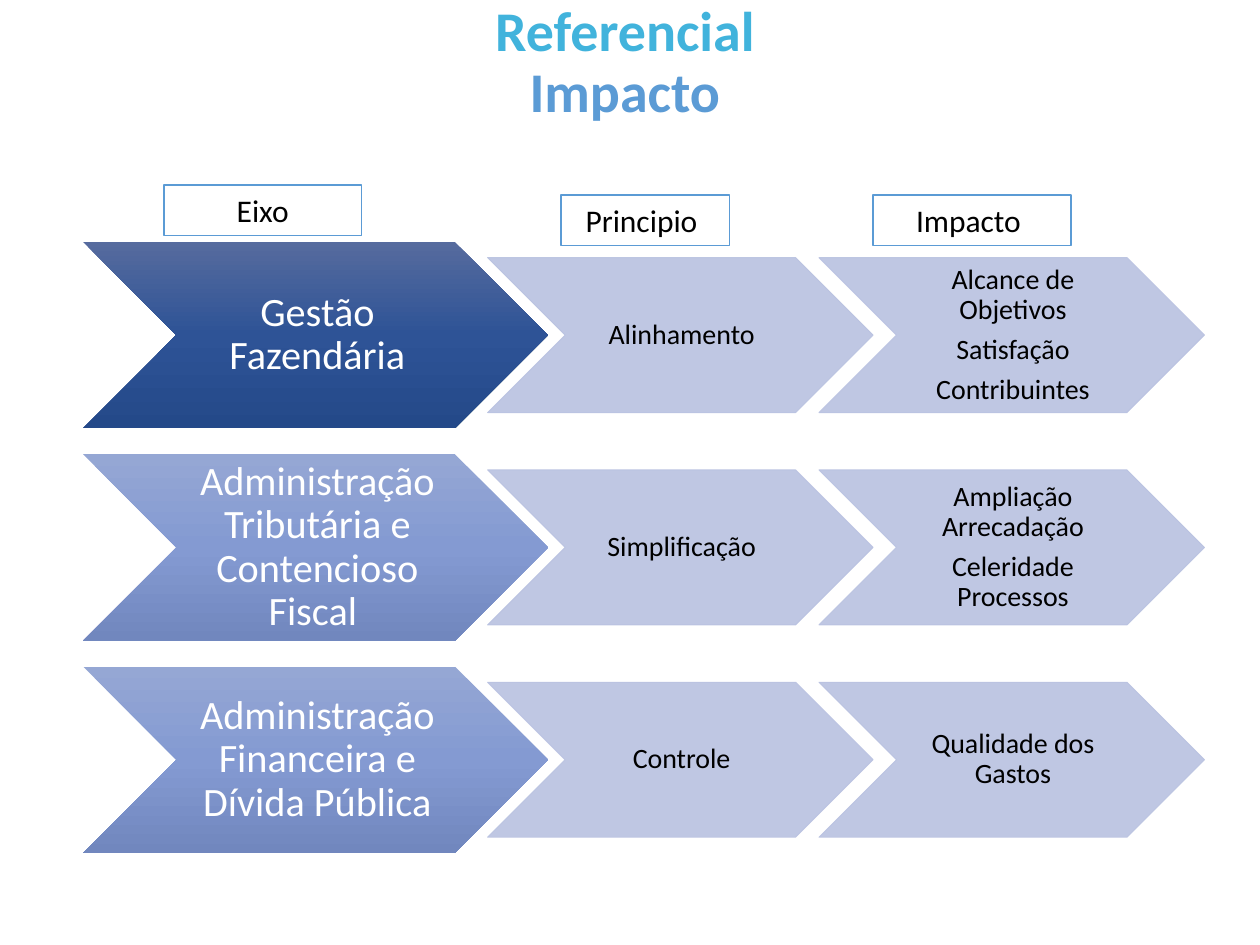
from dataclasses import dataclass

from lxml import etree
from pptx import Presentation
from pptx.dml.color import RGBColor
from pptx.enum.shapes import MSO_SHAPE
from pptx.enum.text import MSO_ANCHOR, PP_ALIGN
from pptx.oxml import parse_xml
from pptx.oxml.ns import nsdecls, qn
from pptx.util import Inches, Pt

CHEVRON, RECT = MSO_SHAPE.CHEVRON, MSO_SHAPE.RECTANGLE
MIDDLE, TOP = MSO_ANCHOR.MIDDLE, MSO_ANCHOR.TOP
CENTER = PP_ALIGN.CENTER

COLS, ROWS = 1000, 750
FIRST_CENTER, PITCH = 266, 168.5
FONT = "Calibri"
BLUE, CYAN, PALE = "5B9BD5", "41B3DC", "B9C2E1"
WHITE, BLACK = "FFFFFF", "000000"
DARK_GRADIENT = ("566B9E", "2E5396", "244989")
LIGHT_GRADIENT = ("95A7D4", "849AD2", "7187BE")

prs = Presentation()
prs.slide_width, prs.slide_height = Inches(10), Inches(7.5)
s = prs.slides.add_slide(prs.slide_layouts[6])


@dataclass(frozen=True)
class Box:
    col: float
    row: float
    cols: float
    rows: float

    def emu(self) -> tuple[int, ...]:
        w, h = prs.slide_width / COLS, prs.slide_height / ROWS
        return (round(self.col * w), round(self.row * h),
                round(self.cols * w), round(self.rows * h))


@dataclass(frozen=True)
class Column:
    col: float
    cols: float
    rows: float
    size: int
    color: str
    inset: float


@dataclass(frozen=True)
class Band:
    gradient: tuple[str, ...]
    cells: tuple[tuple[str, ...], ...]


@dataclass(frozen=True)
class Header:
    box: Box
    text: str


COLUMNS = (
    Column(66, 369, 148, 23, WHITE, 0.02),
    Column(387, 306, 123, 16, BLACK, 0.01),
    Column(650, 306, 123, 16, BLACK, 0.01),
)
BANDS = (
    Band(DARK_GRADIENT, (("Gestão Fazendária",), ("Alinhamento",),
                         ("Alcance de Objetivos", "Satisfação", "Contribuintes"))),
    Band(LIGHT_GRADIENT, (("Administração Tributária e Contencioso Fiscal ",), ("Simplificação",),
                          ("Ampliação Arrecadação", "Celeridade Processos"))),
    Band(LIGHT_GRADIENT, (("Administração Financeira e Dívida Pública",), ("Controle",),
                          ("Qualidade dos Gastos",))),
)
HEADERS = (
    Header(Box(130, 147, 157, 40), "Eixo"),
    Header(Box(445, 155, 134, 40), "Principio "),
    Header(Box(693, 155, 157, 40), "Impacto "),
)


def rgb(value: str) -> RGBColor:
    return RGBColor.from_string(value)


def apply(target, values: dict) -> None:
    for name, value in values.items():
        setattr(target, name, value)


def add_run(p, text: str, size: int, color: str, bold: bool = False) -> None:
    r = p.add_run()
    r.text = text
    apply(r.font, {"name": FONT, "size": Pt(size), "bold": bold})
    r.font.color.rgb = rgb(color)


def add_text(shapes, box: Box, **frame):
    tf = shapes.add_textbox(*box.emu()).text_frame
    apply(tf, {"word_wrap": True, "vertical_anchor": MIDDLE, **frame})
    return tf


def add_solid(shapes, kind, box: Box, fill: str, line: str, width: float):
    sp = shapes.add_shape(kind, *box.emu())
    sp.shadow.inherit = False
    sp.fill.solid()
    sp.fill.fore_color.rgb = rgb(fill)
    sp.line.color.rgb = rgb(line)
    sp.line.width = Pt(width)
    return sp


def add_gradient_chevron(shapes, box: Box, colors: tuple[str, ...]) -> None:
    sp = shapes.add_shape(CHEVRON, *box.emu())
    sp.shadow.inherit = False
    sp.line.fill.background()
    step = 100000 // (len(colors) - 1)
    stops = "".join(f'<a:gs pos="{i * step}"><a:srgbClr val="{c}"/></a:gs>'
                    for i, c in enumerate(colors))
    sp._element.spPr.find(qn("a:prstGeom")).addnext(parse_xml(
        f'<a:gradFill {nsdecls("a")} rotWithShape="1"><a:gsLst>{stops}</a:gsLst>'
        '<a:lin ang="5400000" scaled="0"/></a:gradFill>'))


def add_pale_chevron(shapes, box: Box) -> None:
    sp = add_solid(shapes, CHEVRON, box, PALE, PALE, 0.5)
    for clr in sp._element.spPr.iter(qn("a:srgbClr")):
        etree.SubElement(clr, qn("a:alpha")).set("val", "90000")


def add_cell(shapes, column: Column, center: float, band: Band, texts: tuple[str, ...]) -> None:
    top, tip = center - column.rows / 2, column.rows / 2
    box = Box(column.col, top, column.cols, column.rows)
    if column is COLUMNS[0]:
        add_gradient_chevron(shapes, box, band.gradient)
    else:
        add_pale_chevron(shapes, box)
    inset = Inches(column.inset)
    tf = add_text(shapes, Box(column.col + tip, top, column.cols - 2 * tip, column.rows),
                  margin_left=Inches(column.inset + 0.01), margin_right=0,
                  margin_top=inset, margin_bottom=inset)
    for i, text in enumerate(texts):
        p = tf.add_paragraph() if i else tf.paragraphs[0]
        apply(p, {"alignment": CENTER, "line_spacing": 0.9,
                  "space_after": Pt(0.35 * column.size)})
        add_run(p, text, column.size, column.color)


def add_header(header: Header) -> None:
    sp = add_solid(s.shapes, RECT, header.box, WHITE, BLUE, 1)
    tf = sp.text_frame
    apply(tf, {"word_wrap": True, "vertical_anchor": TOP})
    p = tf.paragraphs[0]
    p.alignment = CENTER
    add_run(p, header.text, 18, BLACK)


def add_title() -> None:
    p = add_text(s.shapes, Box(65, 5, 862, 91)).paragraphs[0]
    apply(p, {"alignment": CENTER, "line_spacing": 0.9})
    add_run(p, "Referencial", 32, CYAN, True)
    p.add_line_break()
    add_run(p, "Impacto", 32, BLUE, True)


def main() -> None:
    add_title()
    diagram = s.shapes.add_group_shape().shapes
    for i, band in enumerate(BANDS):
        for column, texts in zip(COLUMNS, band.cells):
            add_cell(diagram, column, FIRST_CENTER + i * PITCH, band, texts)
    for header in HEADERS:
        add_header(header)
    prs.save("out.pptx")


if __name__ == "__main__":
    main()
